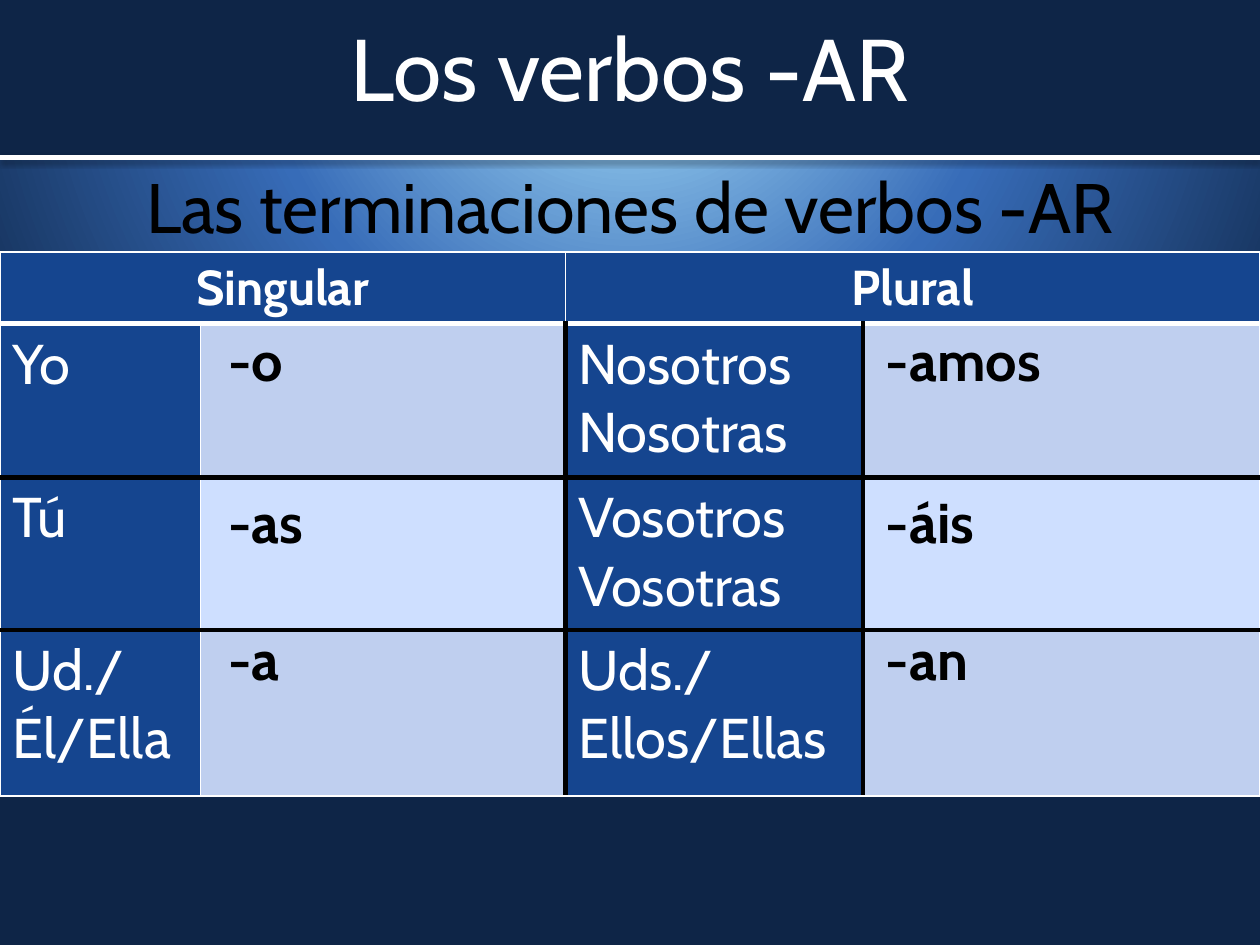
from lxml import etree
from pptx import Presentation
from pptx import util as u
from pptx.dml.color import RGBColor
from pptx.enum import shapes, text
from pptx.oxml import parse_xml
from pptx.oxml.ns import nsdecls, qn

COLORS = {
    "navy": "0E2547", "blue": "15458F", "mid": "376CB8", "sky": "B1E9FF",
    "band": "BFCFEF", "pale": "CEDFFF", "white": "FFFFFF", "black": "000000",
}
FONT = "Cabin"
GRID_COLUMNS, GRID_ROWS = 100, 75
PLAIN_TABLE = "{2D5ABB26-0587-4C30-8999-92F81FD0307C}"


class Deck:
    def __init__(self):
        self.prs = Presentation()
        self.prs.slide_width, self.prs.slide_height = u.Inches(10), u.Inches(7.5)
        self.slide = self.prs.slides.add_slide(self.prs.slide_layouts[6])

    def x(self, columns):
        return round(self.prs.slide_width * columns / GRID_COLUMNS)

    def y(self, rows):
        return round(self.prs.slide_height * rows / GRID_ROWS)

    def area(self, left, top, width, height):
        return self.x(left), self.y(top), self.x(width), self.y(height)

    def color(self, name):
        return RGBColor.from_string(COLORS[name])

    def background(self, stops):
        fill = self.slide.background.fill
        fill.gradient()
        gradient = self.slide._element.find(".//" + qn("a:gradFill"))
        marks = "".join(
            f'<a:gs pos="{share * 1000}"><a:srgbClr val="{COLORS[name]}"/></a:gs>'
            for share, name in stops)
        gradient.getparent().replace(gradient, parse_xml(
            f'<a:gradFill {nsdecls("a")} rotWithShape="1"><a:gsLst>{marks}</a:gsLst>'
            '<a:path path="circle"><a:fillToRect l="50000" t="-80000" r="50000" b="180000"/>'
            '</a:path></a:gradFill>'))

    def band(self, area, fill):
        band = self.slide.shapes.add_shape(shapes.MSO_SHAPE.RECTANGLE, *self.area(*area))
        band.shadow.inherit = False
        band.fill.solid()
        band.fill.fore_color.rgb = self.color(fill)
        band.line.fill.background()

    def rule(self, top, color, width):
        rule = self.slide.shapes.add_connector(
            shapes.MSO_CONNECTOR.STRAIGHT, 0, self.y(top), self.x(GRID_COLUMNS), self.y(top))
        rule.line.color.rgb = self.color(color)
        rule.line.width = u.Pt(width)
        rule._element.spPr.append(parse_xml(
            f'<a:effectLst {nsdecls("a")}><a:outerShdw blurRad="{u.Pt(3.1)}" dist="{u.Pt(1.6)}" '
            f'dir="5400000"><a:srgbClr val="{COLORS["black"]}"><a:alpha val="38000"/>'
            '</a:srgbClr></a:outerShdw></a:effectLst>'))

    def wording(self, frame, words, size, color, bold=False, align=None):
        frame.text = words
        for paragraph in frame.paragraphs:
            paragraph.alignment = align
            font = paragraph.font
            font.name, font.size, font.bold = FONT, u.Pt(size), bold
            font.color.rgb = self.color(color)

    def heading(self, area, words, size, color, anchor):
        frame = self.slide.shapes.add_textbox(*self.area(*area)).text_frame
        frame.word_wrap = True
        frame.vertical_anchor = anchor
        self.wording(frame, words, size, color, align=text.PP_ALIGN.CENTER)

    def table(self, left, top, widths, heights):
        frame = self.slide.shapes.add_table(
            len(heights), len(widths), *self.area(left, top, sum(widths), sum(heights)))
        table = frame.table
        table.first_row = table.horz_banding = False
        table._tbl.tblPr.find(qn("a:tableStyleId")).text = PLAIN_TABLE
        for column, width in zip(table.columns, widths):
            column.width = self.x(width)
        for row, height in zip(table.rows, heights):
            row.height = self.y(height)
        return table

    def cell(self, cell, fill, borders):
        cell.fill.solid()
        cell.fill.fore_color.rgb = self.color(fill)
        properties = cell._tc.get_or_add_tcPr()
        for place, (side, (color, width)) in enumerate(zip("LRTB", borders)):
            border = etree.Element(qn(f"a:ln{side}"), w=str(u.Pt(width)))
            solid = etree.SubElement(border, qn("a:solidFill"))
            etree.SubElement(solid, qn("a:srgbClr"), val=COLORS[color])
            properties.insert(place, border)

    def conjugation(self, top, widths, heights, headers, pronouns):
        table = self.table(0, top, widths, heights)
        thin, thick, header_rule = ("white", 1), ("black", 3), ("white", 3)
        across = [thin, header_rule, thick, thick, thin]
        for r in range(len(heights)):
            down = [thin, thin, thick, thick, thin] if r else [thin] * 5
            for c in range(len(widths)):
                if r == 0 or c % 2 == 0:
                    fill = "blue"
                else:
                    fill = "band" if r % 2 else "pale"
                self.cell(table.cell(r, c), fill,
                          (down[c], down[c + 1], across[r], across[r + 1]))
        for c, header in zip((0, 2), headers):
            table.cell(0, c).merge(table.cell(0, c + 1))
            self.wording(table.cell(0, c).text_frame, header, 28, "white", True,
                         text.PP_ALIGN.CENTER)
            for r, pronoun in enumerate(pronouns[header], 1):
                self.wording(table.cell(r, c).text_frame, pronoun, 32, "white")

    def ending(self, left, top, width, words):
        table = self.table(left, top, [width], [6.3])
        table.cell(0, 0).fill.background()
        self.wording(table.cell(0, 0).text_frame, words, 32, "black", True)


def main():
    deck = Deck()
    deck.background([(0, "sky"), (48, "mid"), (100, "navy")])
    deck.band((0, 0, GRID_COLUMNS, 12.5), "navy")
    deck.heading((0, 12.5, GRID_COLUMNS, 52), "Las terminaciones de verbos -AR", 40, "black",
                 text.MSO_ANCHOR.TOP)
    deck.rule(12.5, "white", 3)
    deck.heading((0, 0, GRID_COLUMNS, 10.6), "Los verbos -AR", 50, "white",
                 text.MSO_ANCHOR.MIDDLE)
    deck.conjugation(20, [15.9, 29, 23.6, 31.5], [5.7, 12.2, 12.1, 13.2],
                     ["Singular", "Plural"], {
        "Singular": ["Yo", "Tú", "Ud./Él/Ella"],
        "Plural": ["Nosotros\nNosotras", "Vosotros\nVosotras", "Uds./Ellos/Ellas"],
    })
    ending_tops = [25.5, 38.3, 49.2]
    for left, endings in ((17.1, [("-o", 24.6), ("-as", 23.4), ("-a", 24.6)]),
                          (69.3, [("-amos", 28.2), ("-áis", 25.2), ("-an", 24)])):
        for top, (words, width) in zip(ending_tops, endings):
            deck.ending(left, top, width, words)
    deck.prs.save("out.pptx")


if __name__ == "__main__":
    main()
